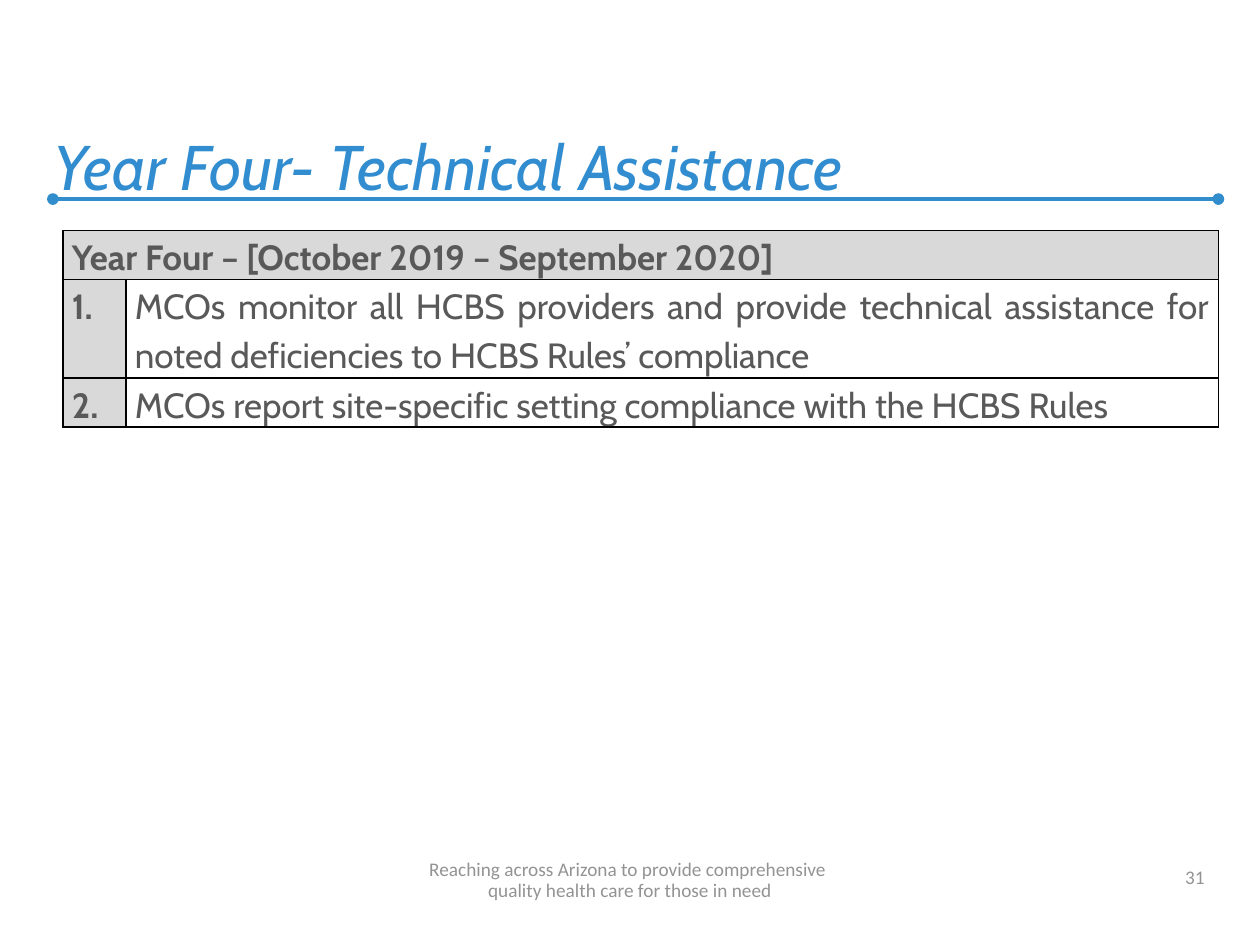
from dataclasses import dataclass

from lxml import etree
from pptx import Presentation
from pptx.dml.color import RGBColor
from pptx.enum.shapes import MSO_CONNECTOR
from pptx.enum.text import MSO_ANCHOR, PP_ALIGN
from pptx.oxml.ns import qn
from pptx.util import Inches, Pt

LEFT, MID, RIGHT = PP_ALIGN.LEFT, PP_ALIGN.CENTER, PP_ALIGN.RIGHT
FULL = PP_ALIGN.JUSTIFY
BASE = MSO_ANCHOR.BOTTOM
STRAIGHT = MSO_CONNECTOR.STRAIGHT


@dataclass(frozen=True)
class Theme:
    head: str = "318DCF"
    rule: str = "318DCC"
    body: str = "595959"
    foot: str = "939393"
    shade: str = "D9D9D9"
    edge: str = "000000"
    main: str = "Cabin"
    small: str = "Calibri"
    head_size: int = 36
    body_size: int = 20
    foot_size: int = 11


@dataclass(frozen=True)
class Style:
    font: str
    size: int
    color: str
    bold: bool = False
    slant: bool = False


@dataclass(frozen=True)
class Label:
    lines: tuple[str, ...]
    box: tuple[float, float, float, float]
    align: PP_ALIGN
    style: Style


@dataclass(frozen=True)
class Row:
    high: float
    cells: tuple[str, ...]


THEME = Theme()
HEAD = Style(THEME.main, THEME.head_size, THEME.head, slant=True)
FOOT = Style(THEME.small, THEME.foot_size, THEME.foot)
BODY = Style(THEME.main, THEME.body_size, THEME.body)
BOLD = Style(THEME.main, THEME.body_size, THEME.body, bold=True)

LABELS = (
    Label(("Year Four- Technical Assistance",), (0.33, 0.33, 9.42, 1.33), LEFT, HEAD),
    Label(("31",), (7.33, 6.78, 2.33, 0.32), RIGHT, FOOT),
    Label(("Reaching across Arizona to provide comprehensive ",
           "quality health care for those in need"), (0, 6.78, 10, 0.42), MID, FOOT),
)
COLS = (0.5, 8.67)
ROWS = (
    Row(0.39, ("Year Four – [October 2019 – September 2020]",)),
    Row(0.78, ("1.", "MCOs monitor all HCBS providers and provide technical "
                     "assistance for noted deficiencies to HCBS Rules’ compliance")),
    Row(0.39, ("2.", "MCOs report site-specific setting compliance with the HCBS Rules")),
)


def add_run(para, text: str, style: Style) -> None:
    run = para.add_run()
    run.text = text
    font = run.font
    font.name, font.size = style.font, Pt(style.size)
    font.bold, font.italic = style.bold, style.slant
    font.color.rgb = RGBColor.from_string(style.color)


def add_label(slide, label: Label) -> None:
    frame = slide.shapes.add_textbox(*map(Inches, label.box)).text_frame
    frame.word_wrap = True
    frame.vertical_anchor = BASE
    para = frame.paragraphs[0]
    para.alignment = label.align
    if len(label.lines) > 1:
        para.line_spacing = Pt(12)
    for spot, line in enumerate(label.lines):
        if spot:
            para.add_line_break()
        add_run(para, line, label.style)


def add_rule(slide) -> None:
    """Draw the title rule with a dot at each end."""
    rule = slide.shapes.add_connector(
        STRAIGHT, Inches(0.42), Inches(1.58), Inches(9.67), Inches(1.58))
    rule.line.color.rgb = RGBColor.from_string(THEME.rule)
    rule.line.width = Pt(2.25)
    line = rule.line._get_or_add_ln()
    for end in ("a:headEnd", "a:tailEnd"):
        etree.SubElement(line, qn(end), type="oval")
    etree.SubElement(rule._element.spPr, qn("a:effectLst"))


def set_edges(cell) -> None:
    props = cell._tc.get_or_add_tcPr()
    for spot, side in enumerate(("a:lnL", "a:lnR", "a:lnT", "a:lnB")):
        line = etree.Element(qn(side), w=str(Pt(1)))
        fill = etree.SubElement(line, qn("a:solidFill"))
        etree.SubElement(fill, qn("a:srgbClr"), val=THEME.edge)
        props.insert(spot, line)


def fill_cell(cell, text: str, first: bool) -> None:
    cell.margin_left = cell.margin_right = Inches(0.07)
    cell.margin_top = cell.margin_bottom = 0
    para = cell.text_frame.paragraphs[0]
    para.alignment = FULL
    para.line_spacing = 1.15
    para.space_after = Pt(10)
    add_run(para, text, BOLD if first else BODY)


def add_grid(slide) -> None:
    high = sum(row.high for row in ROWS)
    grid = slide.shapes.add_table(
        len(ROWS), len(COLS), Inches(0.5), Inches(1.83),
        Inches(sum(COLS)), Inches(high)).table
    for col, wide in zip(grid.columns, COLS):
        col.width = Inches(wide)
    for r, row in enumerate(ROWS):
        grid.rows[r].height = Inches(row.high)
        for c in range(len(COLS)):
            cell = grid.cell(r, c)
            if r == 0 or c == 0:
                cell.fill.solid()
                cell.fill.fore_color.rgb = RGBColor.from_string(THEME.shade)
            else:
                cell.fill.background()
            set_edges(cell)
        for c, text in enumerate(row.cells):
            fill_cell(grid.cell(r, c), text, c == 0)
    grid.cell(0, 0).merge(grid.cell(0, len(COLS) - 1))


def main() -> None:
    deck = Presentation()
    deck.slide_width, deck.slide_height = Inches(10), Inches(7.5)
    slide = deck.slides.add_slide(deck.slide_layouts[6])
    add_rule(slide)
    for label in LABELS:
        add_label(slide, label)
    add_grid(slide)
    deck.save("out.pptx")


if __name__ == "__main__":
    main()
